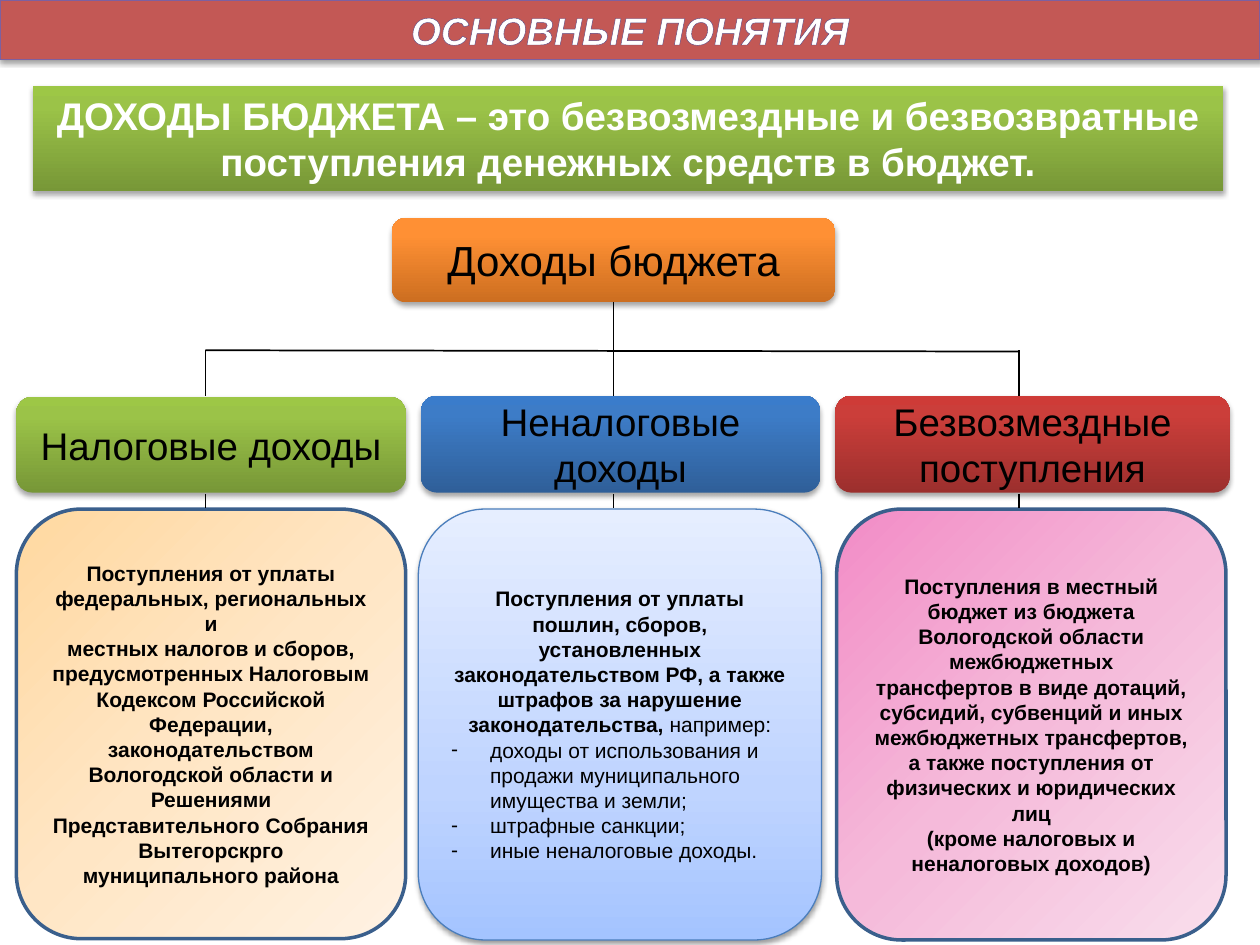
from copy import deepcopy
from typing import NamedTuple

from lxml.etree import SubElement as Sub
from pptx import Presentation
from pptx.dml.color import RGBColor
from pptx.enum.shapes import MSO_CONNECTOR as Link, MSO_SHAPE as Kind
from pptx.enum.text import MSO_ANCHOR as Anchor, MSO_AUTO_SIZE as Auto, PP_ALIGN as Align
from pptx.oxml.ns import qn
from pptx.util import Inches, Pt


class Box(NamedTuple):
    kind: Kind
    at: tuple
    stops: tuple
    angle: int
    text: str = ""
    size: int = 12
    color: str = "000000"
    bold: bool = False
    edge: tuple = ()
    shade: tuple = ()
    anchor: Anchor = Anchor.MIDDLE


def rgb(code: str) -> RGBColor:
    return RGBColor.from_string(code)


def place(shape, at: tuple) -> None:
    shape.left, shape.top, shape.width, shape.height = map(Inches, at)


def style(run, size: int, color: str, bold: bool) -> None:
    font = run.font
    font.name, font.size, font.bold = "Arial", Pt(size), bold
    font.color.rgb = rgb(color)


def write(shape, text: str, size: int, color: str, bold: bool, anchor: Anchor) -> None:
    frame = shape.text_frame
    frame.text = text
    frame.word_wrap = True
    frame.auto_size = Auto.NONE
    frame.vertical_anchor = anchor
    for para in frame.paragraphs:
        para.alignment = Align.CENTER
        for run in para.runs:
            style(run, size, color, bold)


def blend(shape, stops: tuple, angle: int) -> None:
    shape.fill.gradient()
    shape.fill.gradient_angle = 360 - angle
    marks = shape._element.spPr.find(qn("a:gradFill")).find(qn("a:gsLst"))
    marks.append(deepcopy(marks[0]))
    for mark, (spot, code) in zip(shape.fill.gradient_stops, stops):
        mark.position = spot / 100
        mark.color.rgb = rgb(code)


def border(shape, edge: tuple) -> None:
    if edge:
        shape.line.color.rgb = rgb(edge[0])
        shape.line.width = Pt(edge[1])
    else:
        shape.line.fill.background()


def shadow(shape, shade: tuple) -> None:
    shape.shadow.inherit = False
    if shade:
        alpha, dist = shade
        glow = Sub(shape._element.spPr.find(qn("a:effectLst")), qn("a:outerShdw"),
                   blurRad=str(Pt(3.1)), dist=str(Pt(dist)), dir="5400000", rotWithShape="0")
        tint = Sub(glow, qn("a:srgbClr"), val="000000")
        Sub(tint, qn("a:alpha"), val=str(alpha * 1000))


def draw(slide, box: Box) -> None:
    shape = slide.shapes.add_shape(box.kind, *map(Inches, box.at))
    blend(shape, box.stops, box.angle)
    border(shape, box.edge)
    shadow(shape, box.shade)
    if box.text:
        write(shape, box.text, box.size, box.color, box.bold, box.anchor)


def join(slide, x1: float, y1: float, x2: float, y2: float) -> None:
    line = slide.shapes.add_connector(Link.STRAIGHT, *map(Inches, (x1, y1, x2, y2)))
    line.line.color.rgb = rgb("000000")
    line.line.width = Pt(1)
    Sub(line._element.spPr, qn("a:effectLst"))


def head(title) -> None:
    place(title, (0, 0, 10, 0.47))
    title.fill.solid()
    title.fill.fore_color.rgb = rgb("C35855")
    border(title, ("7D60A0", 0.75))
    shadow(title, SOFT)
    write(title, "ОСНОВНЫЕ ПОНЯТИЯ", 22, "FFFFFF", True, Anchor.MIDDLE)
    run = title.text_frame.paragraphs[0].runs[0]
    run.font.italic = True
    props = run._r.get_or_add_rPr()
    rim = Sub(props, qn("a:ln"), w=str(Pt(0.71)))
    Sub(Sub(rim, qn("a:solidFill")), qn("a:srgbClr"), val="5E457C")
    props.insert(0, rim)


def fill_list(body) -> None:
    place(body, (3.48, 4.2, 2.88, 3.1))
    write(body, "\n".join((LEAD, *ITEMS)), 12, "000000", False, Anchor.MIDDLE)
    first, *rest = body.text_frame.paragraphs
    first.runs[0].font.bold = True
    tail = first.add_run()
    tail.text = "например:"
    style(tail, 12, "000000", False)
    for para in (first, *rest):
        props = para._p.get_or_add_pPr()
        listed = para is not first
        props.set("marL", str(Inches(0.31) if listed else 0))
        props.set("indent", str(Inches(-0.31) if listed else 0))
        if listed:
            Sub(props, qn("a:buChar"), char="-")
            para.alignment = Align.LEFT
        else:
            Sub(props, qn("a:buNone"))
        para.space_before = Pt(0)


SOFT, DEEP = (38, 1.6), (35, 1.8)
GREEN = ((0, "779737"), (80, "9BC348"), (100, "9DC746"))
ORANGE = ((0, "CC6E20"), (80, "FF9034"), (100, "FF9136"))
RED = ((0, "9C2F2D"), (80, "CB3E3A"), (100, "CE3B37"))
BLUE = ((0, "2F5F99"), (80, "3D7CC7"), (100, "3A7CCB"))
PEACH = ((0, "FFD8A0"), (50, "FFE6C5"), (100, "FFF2E3"))
SKY = ((0, "A4C4FF"), (35, "BFD4FF"), (100, "E6EEFF"))
PINK = ((0, "F28CC6"), (50, "F5BADA"), (100, "F9DEEC"))
NAVY = ("3A5F8C", 2)

LEAD = ("Поступления от уплаты пошлин, сборов, установленных законодательством РФ, "
        "а также штрафов за нарушение законодательства, ")
ITEMS = ("доходы от использования и продажи муниципального имущества и земли;",
         "штрафные санкции;", "иные неналоговые доходы.")
TAXES = """Поступления от уплаты
федеральных, региональных и
местных налогов и сборов,
предусмотренных Налоговым
Кодексом Российской
Федерации, законодательством
Вологодской области и
Решениями Представительного Собрания Вытегорскрго муниципального района"""
GRANTS = """Поступления в местный
бюджет из бюджета Вологодской области межбюджетных
трансфертов в виде дотаций,
субсидий, субвенций и иных
межбюджетных трансфертов, а также поступления от
физических и юридических лиц
(кроме налоговых и
неналоговых доходов)"""
CLAIM = "ДОХОДЫ БЮДЖЕТА – это безвозмездные и безвозвратные поступления денежных средств в бюджет."

NODE, PANEL = Kind.FLOWCHART_ALTERNATE_PROCESS, Kind.ROUNDED_RECTANGLE
BOXES = (
    Box(Kind.RECTANGLE, (0.26, 0.68, 9.45, 0.84), GREEN, 270, CLAIM, 22, "FFFFFF", True,
        shade=DEEP, anchor=Anchor.TOP),
    Box(NODE, (3.11, 1.73, 3.52, 0.67), ORANGE, 270, "Доходы бюджета", 24, shade=DEEP),
    Box(NODE, (6.63, 3.14, 3.13, 0.77), RED, 270, "Безвозмездные поступления", 22, shade=DEEP),
    Box(NODE, (3.34, 3.14, 3.17, 0.77), BLUE, 270, "Неналоговые доходы", 22, shade=DEEP),
    Box(NODE, (0.13, 3.15, 3.09, 0.76), GREEN, 270, "Налоговые доходы", 22, shade=DEEP),
    Box(PANEL, (0.13, 4.04, 3.09, 3.41), PEACH, 45, TAXES, bold=True, edge=NAVY),
    Box(PANEL, (3.32, 4.04, 3.2, 3.42), SKY, 270, edge=("4B7EBC", 0.75), shade=SOFT),
    Box(PANEL, (6.64, 4.04, 3.09, 3.42), PINK, 45, GRANTS, bold=True, edge=NAVY),
)
STEMS = (1.63, 4.87, 8.09)


def main() -> None:
    deck = Presentation()
    deck.slide_width, deck.slide_height = Inches(10), Inches(7.5)
    slide = deck.slides.add_slide(deck.slide_layouts[1])
    title, body = slide.placeholders
    head(title)
    for box in BOXES:
        draw(slide, box)
    join(slide, STEMS[1], 2.4, STEMS[1], 2.78)
    join(slide, STEMS[0], 2.78, STEMS[2], 2.79)
    for x in STEMS:
        join(slide, x, 2.78, x, 3.14)
        join(slide, x, 3.92, x, 4.03)
    fill_list(body)
    slide.shapes._spTree.append(body._element)
    deck.save("out.pptx")


if __name__ == "__main__":
    main()
